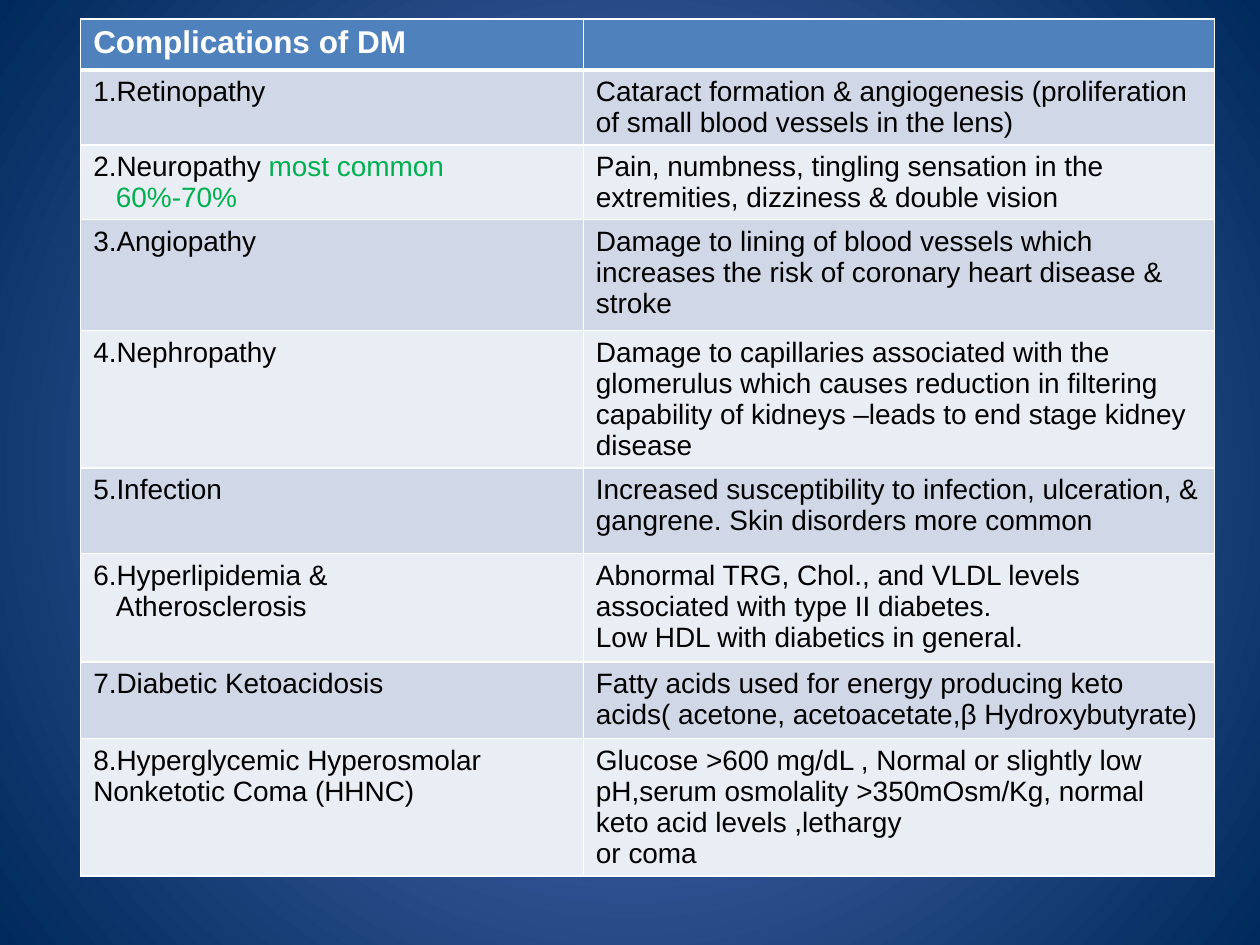
from dataclasses import dataclass

from lxml.etree import SubElement
from pptx import Presentation
from pptx.dml.color import RGBColor
from pptx.oxml.ns import qn
from pptx.util import Inches, Pt

WHITE = RGBColor(0xFF, 0xFF, 0xFF)
BLACK = RGBColor(0x00, 0x00, 0x00)
GREEN = RGBColor(0x00, 0xB0, 0x50)
HEADER_BLUE = RGBColor(0x4F, 0x81, 0xBD)
BANDS = (RGBColor(0xD0, 0xD8, 0xE8), RGBColor(0xE9, 0xED, 0xF4))
GLOW_BLUE = RGBColor(0x5E, 0x7C, 0xC5)
DEEP_BLUE = RGBColor(0x00, 0x29, 0x5C)
COLUMN_WIDTHS = (3.99, 5.01)
HEADER_HEIGHT = 0.38


@dataclass(frozen=True)
class Complication:
    height: float
    name: str
    effects: tuple[str, ...]
    note: str = ""
    second_line: str = ""


COMPLICATIONS = (
    Complication(0.59, "1.Retinopathy", (
        "Cataract formation & angiogenesis (proliferation of small blood vessels in the lens)",)),
    Complication(0.59, "2.Neuropathy", (
        "Pain, numbness, tingling sensation in the extremities, dizziness & double vision",),
        note=" most common", second_line="60%-70%"),
    Complication(0.88, "3.Angiopathy", (
        "Damage to lining of blood vessels which increases the risk of coronary heart disease & stroke",)),
    Complication(1.09, "4.Nephropathy", (
        "Damage to capillaries associated with the glomerulus which causes reduction in "
        "filtering capability of kidneys –leads to end stage kidney disease",)),
    Complication(0.68, "5.Infection", (
        "Increased susceptibility to infection, ulceration, & gangrene. Skin disorders more common",)),
    Complication(0.86, "6.Hyperlipidemia &", (
        "Abnormal TRG, Chol., and VLDL levels associated with type II diabetes.",
        "Low HDL with diabetics in general."),
        second_line="Atherosclerosis"),
    Complication(0.61, "7.Diabetic Ketoacidosis", (
        "Fatty acids used for energy producing keto acids( acetone, acetoacetate,β Hydroxybutyrate)",)),
    Complication(1.08, "8.Hyperglycemic Hyperosmolar Nonketotic Coma (HHNC)", (
        "Glucose >600 mg/dL , Normal or slightly low pH,serum osmolality >350mOsm/Kg, "
        "normal keto acid levels ,lethargy",
        "or coma")),
)


def paint_background(page) -> None:
    fill = page.background.fill
    fill.gradient()
    for stop, color in zip(fill.gradient_stops, (GLOW_BLUE, DEEP_BLUE)):
        stop.color.rgb = color
    gradient = next(page.element.iter(qn("a:gradFill")))
    gradient.remove(gradient.find(qn("a:lin")))
    circle = SubElement(gradient, qn("a:path"), {"path": "circle"})
    SubElement(circle, qn("a:fillToRect"), {side: "50000" for side in "ltrb"})


def style_cell(cell, fill: RGBColor, top: float = 1, bottom: float = 1) -> None:
    properties = cell._tc.get_or_add_tcPr()
    for side, width in (("L", 1), ("R", 1), ("T", top), ("B", bottom)):
        line = SubElement(properties, qn(f"a:ln{side}"), {"w": str(Pt(width))})
        solid = SubElement(line, qn("a:solidFill"))
        SubElement(solid, qn("a:srgbClr"), {"val": str(WHITE)})
    cell.fill.solid()
    cell.fill.fore_color.rgb = fill


def add_text(para, text: str, *, size: float = 16, color: RGBColor = BLACK,
             bold: bool = False, indent: float = 0) -> None:
    if indent:
        para._p.get_or_add_pPr().set("marL", str(Inches(indent)))
    span = para.add_run()
    span.text = text
    span.font.name = "Arial"
    span.font.size = Pt(size)
    span.font.bold = bold
    span.font.color.rgb = color


def fill_row(table, index: int, entry: Complication) -> None:
    table.rows[index].height = Inches(entry.height)
    name_cell, effect_cell = table.cell(index, 0), table.cell(index, 1)
    for cell in (name_cell, effect_cell):
        style_cell(cell, BANDS[(index - 1) % 2], top=3 if index == 1 else 1)
    name_frame, effect_frame = name_cell.text_frame, effect_cell.text_frame
    add_text(name_frame.paragraphs[0], entry.name)
    second_color = BLACK
    if entry.note:
        add_text(name_frame.paragraphs[0], entry.note, color=GREEN)
        second_color = GREEN
    if entry.second_line:
        add_text(name_frame.add_paragraph(), entry.second_line, color=second_color, indent=0.18)
    for number, effect in enumerate(entry.effects):
        para = effect_frame.add_paragraph() if number else effect_frame.paragraphs[0]
        add_text(para, effect)


def add_complications_table(page) -> None:
    height = HEADER_HEIGHT + sum(entry.height for entry in COMPLICATIONS)
    table = page.shapes.add_table(
        len(COMPLICATIONS) + 1, len(COLUMN_WIDTHS),
        Inches(0.64), Inches(0.15), Inches(sum(COLUMN_WIDTHS)), Inches(height)).table
    for column, width in zip(table.columns, COLUMN_WIDTHS):
        column.width = Inches(width)
    table.rows[0].height = Inches(HEADER_HEIGHT)
    for cell in table.rows[0].cells:
        style_cell(cell, HEADER_BLUE, bottom=3)
        cell.text_frame.paragraphs[0].font.size = Pt(18)
    add_text(table.cell(0, 0).text_frame.paragraphs[0], "Complications of DM",
             size=18, color=WHITE, bold=True)
    for index, entry in enumerate(COMPLICATIONS, start=1):
        fill_row(table, index, entry)


def main() -> None:
    deck = Presentation()
    deck.slide_width, deck.slide_height = Inches(10), Inches(7.5)
    page = deck.slides.add_slide(deck.slide_layouts[6])
    paint_background(page)
    add_complications_table(page)
    deck.save("out.pptx")


if __name__ == "__main__":
    main()
